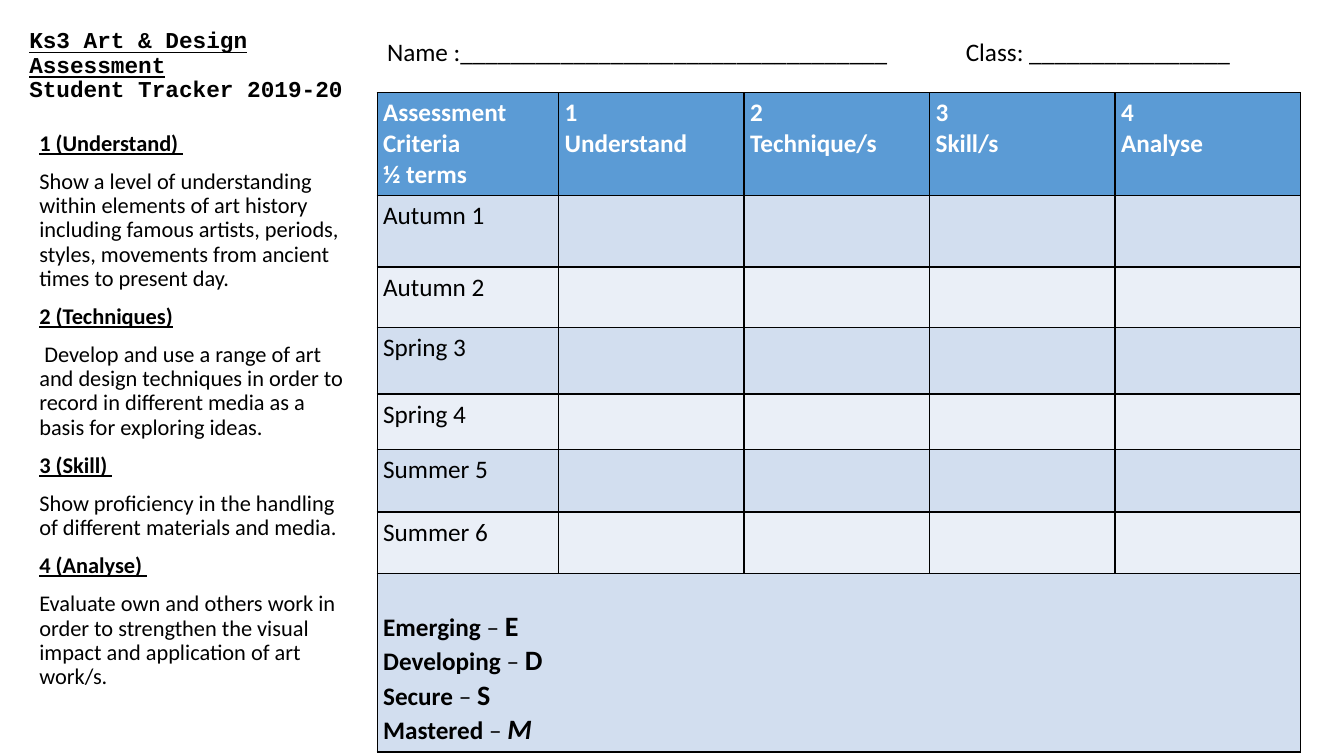
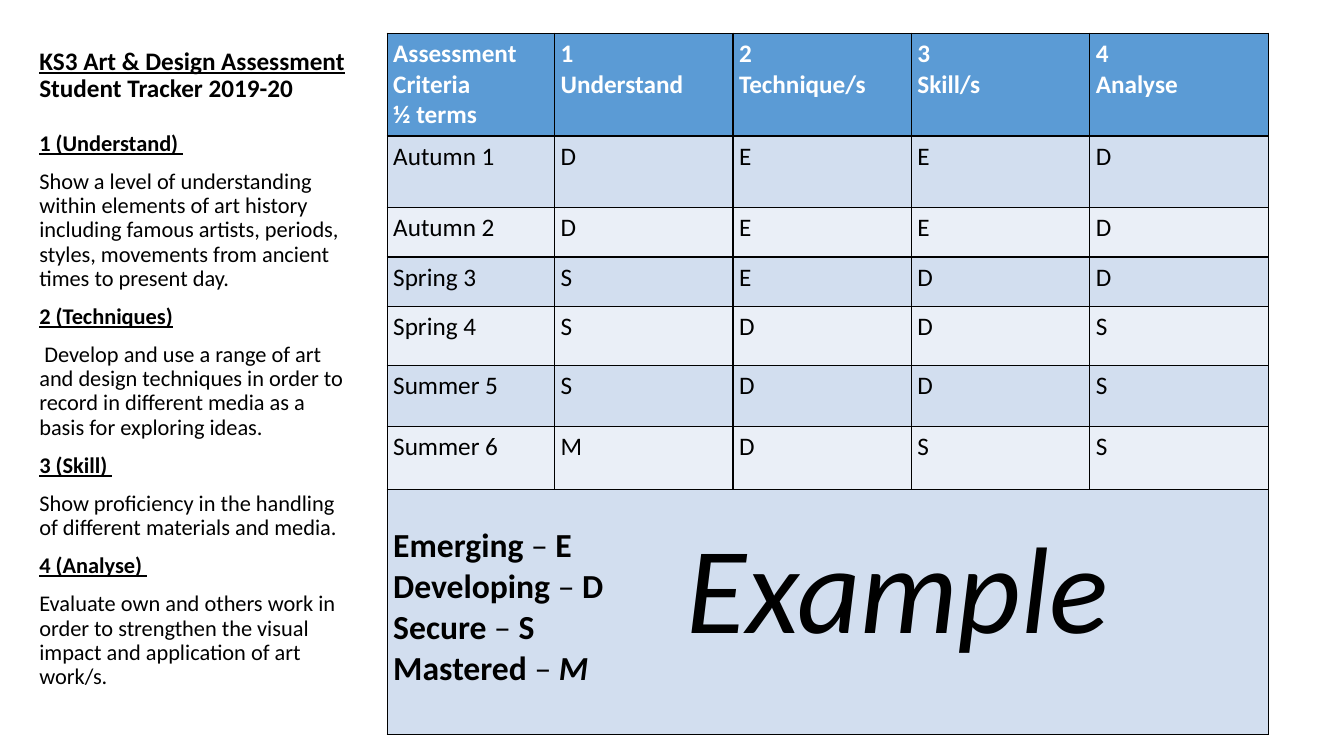
from dataclasses import dataclass

from lxml import etree
from pptx import Presentation
from pptx.dml.color import RGBColor
from pptx.enum.text import MSO_ANCHOR, MSO_AUTO_SIZE, PP_ALIGN
from pptx.oxml.ns import qn
from pptx.util import Inches, Pt

LEFT = PP_ALIGN.LEFT
TOP, BOTTOM = MSO_ANCHOR.TOP, MSO_ANCHOR.BOTTOM
NO_FIT = MSO_AUTO_SIZE.NONE
TITLE_AND_CONTENT = 1


@dataclass(frozen=True)
class Theme:
    font: str = "Calibri"
    typewriter: str = "Courier New"
    ink: str = "000000"
    paper: str = "FFFFFF"
    header: str = "5B9BD5"
    bands: tuple = ("D2DEEF", "EAEFF7")
    typewriter_size: float = 16.2
    criteria_size: float = 16
    text_size: float = 18
    mark_size: float = 20
    large_size: float = 24
    example_size: float = 88
    border: float = 1
    line_spacing: float = 0.9
    paragraph_gap: float = 10


CRITERIA = [
    ("1 (Understand) ",
     "Show a level of understanding within elements of art history including "
     "famous artists, periods, styles, movements from ancient times to present day."),
    ("2 (Techniques)",
     " Develop and use a range of art and design techniques in order to record "
     "in different media as a basis for exploring ideas."),
    ("3 (Skill) ",
     "Show proficiency in the handling of different materials and media."),
    ("4 (Analyse) ",
     "Evaluate own and others work in order to strengthen the visual impact and "
     "application of art work/s."),
]
HEADINGS = ["Assessment Criteria\n½ terms", "1\nUnderstand", "2\nTechnique/s",
            "3\nSkill/s", "4\nAnalyse"]
TERMS = ["Autumn 1", "Autumn 2", "Spring 3", "Spring 4", "Summer 5", "Summer 6"]
LEVELS = ["Emerging", "Developing", "Secure", "Mastered"]
BLANK_GRADES = ["    "] * len(TERMS)
EXAMPLE_GRADES = ["DEED", "DEED", "SEDD", "SDDS", "SDDS", "MDSS"]


class TrackerDeck:
    def __init__(self, theme):
        self.theme = theme
        self.deck = Presentation()
        self.deck.slide_width = Inches(13.33)
        self.deck.slide_height = Inches(7.5)
        self.page = None

    def new_page(self):
        layout = self.deck.slide_layouts[TITLE_AND_CONTENT]
        self.page = self.deck.slides.add_slide(layout)

    def style(self, font, size, bold=False, italic=False, color=None, name=None):
        font.name = name or self.theme.font
        font.size = Pt(size)
        font.bold = bold
        font.italic = italic
        font.color.rgb = RGBColor.from_string(color or self.theme.ink)

    def place(self, shape, left, top, width, height, anchor):
        shape.left, shape.top = Inches(left), Inches(top)
        shape.width, shape.height = Inches(width), Inches(height)
        frame = shape.text_frame
        frame.word_wrap = True
        frame.auto_size = NO_FIT
        frame.vertical_anchor = anchor
        return frame

    def title(self, heading, left, top, width, height, size, name):
        frame = self.place(self.page.shapes.title, left, top, width, height, BOTTOM)
        para = frame.paragraphs[0]
        para.alignment = LEFT
        para.line_spacing = self.theme.line_spacing
        self.style(para.font, size, bold=True, name=name)
        span = para.add_run()
        span.text = heading
        span.font.underline = True
        para.add_line_break()
        para.add_run().text = "Student Tracker 2019-20"

    def criteria(self):
        body = self.page.placeholders[1]
        frame = self.place(body, 0.29, 1.26, 3.27, 5.86, TOP)
        lines = [line for pair in CRITERIA for line in pair]
        frame.text = "\n".join(lines)
        for index, para in enumerate(frame.paragraphs):
            is_heading = index % 2 == 0
            para.alignment = LEFT
            para.line_spacing = self.theme.line_spacing
            para.space_before = Pt(self.theme.paragraph_gap)
            properties = para._p.get_or_add_pPr()
            properties.set("marL", "0")
            properties.set("indent", "0")
            etree.SubElement(properties, qn("a:buNone"))
            self.style(para.font, self.theme.criteria_size, bold=is_heading)
            para.font.underline = is_heading

    def text(self, words, left, top, width, height, size, italic=False, tab=None):
        box = self.page.shapes.add_textbox(0, 0, 0, 0)
        frame = self.place(box, left, top, width, height, TOP)
        frame.text = words
        para = frame.paragraphs[0]
        if tab:
            stops = etree.SubElement(para._p.get_or_add_pPr(), qn("a:tabLst"))
            etree.SubElement(stops, qn("a:tab"), pos=str(Inches(tab)), algn="l")
        self.style(para.font, size, italic=italic)

    def format_cell(self, cell, fill):
        cell.margin_left = cell.margin_right = Inches(0.06)
        cell.margin_top = cell.margin_bottom = Inches(0.05)
        cell.fill.solid()
        cell.fill.fore_color.rgb = RGBColor.from_string(fill)
        properties = cell._tc.get_or_add_tcPr()
        for index, side in enumerate(("a:lnL", "a:lnR", "a:lnT", "a:lnB")):
            line = etree.Element(qn(side), w=str(Pt(self.theme.border)))
            paint = etree.SubElement(line, qn("a:solidFill"))
            etree.SubElement(paint, qn("a:srgbClr"), val=self.theme.ink)
            properties.insert(index, line)

    def legend(self, cell, name_size, mark_size):
        cell.margin_top = Inches(0.36)
        frame = cell.text_frame
        for index, level in enumerate(LEVELS):
            para = frame.add_paragraph() if index else frame.paragraphs[0]
            parts = [(level, name_size, True, False),
                     (" – ", name_size, False, False),
                     (level[0], mark_size, True, level == "Mastered")]
            for words, size, bold, italic in parts:
                span = para.add_run()
                span.text = words
                self.style(span.font, size, bold, italic)

    def tracker(self, grades, left, top, widths, heights, legend_sizes):
        rows = [HEADINGS] + [[term, *marks] for term, marks in zip(TERMS, grades)]
        rows.append([""] * len(HEADINGS))
        frame = self.page.shapes.add_table(
            len(rows), len(HEADINGS), Inches(left), Inches(top),
            Inches(sum(widths)), Inches(sum(heights)))
        table = frame.table
        for column, width in zip(table.columns, widths):
            column.width = Inches(width)
        for row, height in zip(table.rows, heights):
            row.height = Inches(height)
        for r, values in enumerate(rows):
            fill = self.theme.bands[(r - 1) % 2] if r else self.theme.header
            color = self.theme.ink if r else self.theme.paper
            for c, value in enumerate(values):
                cell = table.cell(r, c)
                self.format_cell(cell, fill)
                cell.text = value.strip()
                for para in cell.text_frame.paragraphs:
                    self.style(para.font, self.theme.text_size, bold=r == 0, color=color)
        last = len(rows) - 1
        table.cell(last, 0).merge(table.cell(last, len(HEADINGS) - 1))
        self.legend(table.cell(last, 0), *legend_sizes)


def main():
    theme = Theme()
    tracker = TrackerDeck(theme)

    tracker.new_page()
    tracker.title("Ks3 Art & Design Assessment", 0.19, 0.13, 3.56, 0.94,
                  theme.typewriter_size, theme.typewriter)
    tracker.tracker(BLANK_GRADES, 3.74, 0.92, [1.8] + [1.84] * 4,
                    [1.02, 0.71, 0.6, 0.66, 0.55, 0.62, 0.61, 1.77],
                    (theme.text_size, theme.mark_size))
    tracker.criteria()
    name_line, class_line = "_" * 34, "_" * 16
    tracker.text(f"Name :{name_line}\tClass: {class_line}", 3.74, 0.31, 8.61, 0.4,
                 theme.text_size, tab=5.74)

    tracker.new_page()
    tracker.title("KS3 Art & Design Assessment", 0.29, 0.17, 3.27, 0.9,
                  theme.text_size, theme.font)
    tracker.tracker(EXAMPLE_GRADES, 3.84, 0.33, [1.66] + [1.77] * 4,
                    [1.02, 0.71, 0.49, 0.49, 0.59, 0.6, 0.63, 2.43],
                    (theme.large_size, theme.large_size))
    tracker.criteria()
    tracker.text("Example", 6.71, 5.01, 5.46, 1.58, theme.example_size, italic=True)

    tracker.deck.save("out.pptx")


if __name__ == "__main__":
    main()
